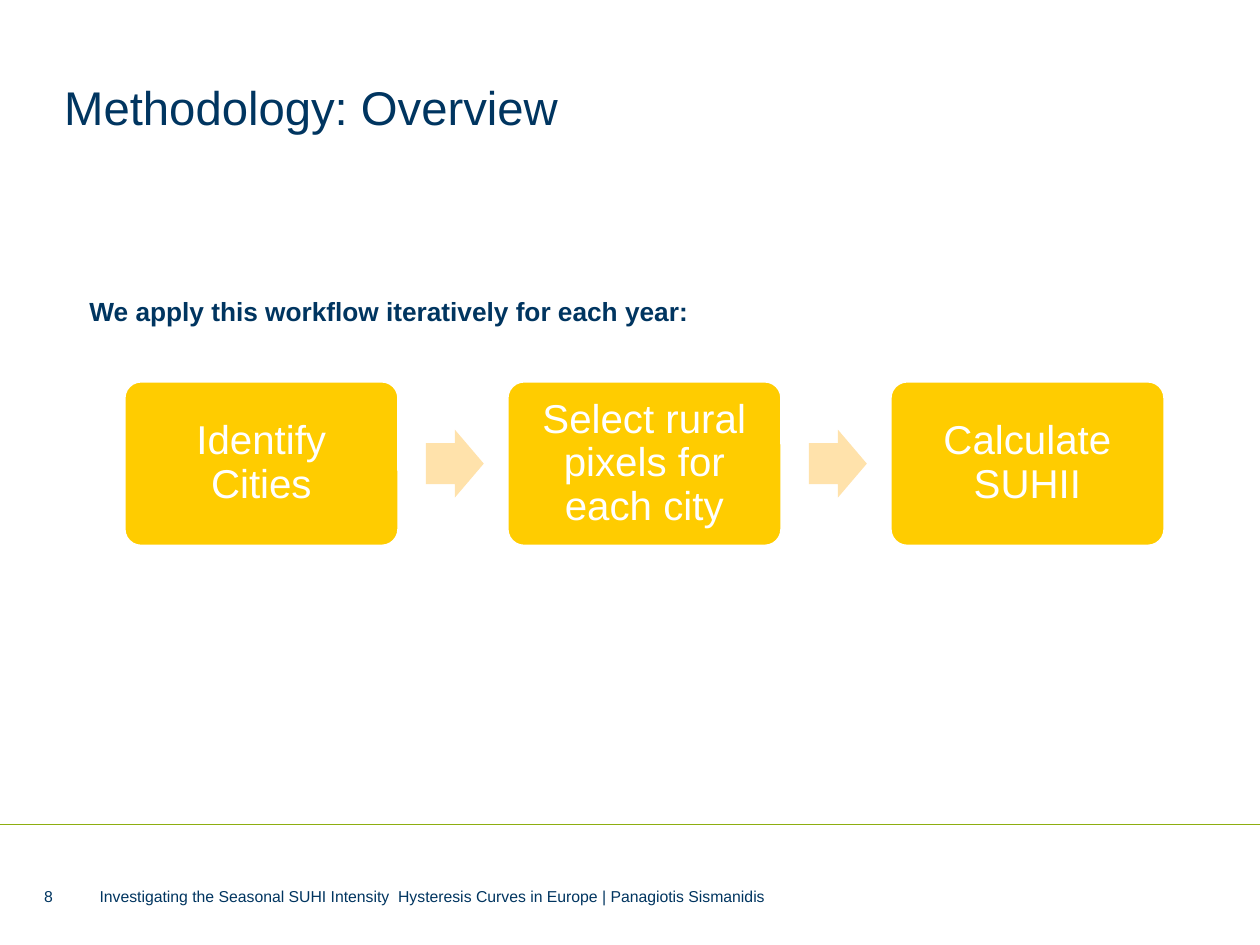
import pptx
import pptx.util
import pptx.dml.color
import pptx.enum.shapes
import pptx.enum.text
import lxml.etree

Inches, Pt = pptx.util.Inches, pptx.util.Pt
SHAPE = pptx.enum.shapes.MSO_SHAPE
ANCHOR = pptx.enum.text.MSO_ANCHOR
NAVY, YELLOW, CREAM, GREEN, WHITE = "003560", "FFCC00", "FFE2AB", "8DAE10", "FFFFFF"


def paint(target, color):
    """Give a fill, or the fill of a line, one solid colour."""
    target.solid()
    target.fore_color.rgb = pptx.dml.color.RGBColor.from_string(color)


def write(box, text, size, color, inset=0, anchor=ANCHOR.TOP, bold=False):
    """Put one run of text into a box and return its paragraph."""
    frame = box.text_frame
    frame.word_wrap = True
    frame.vertical_anchor = anchor
    frame.margin_left = frame.margin_right = Inches(inset)
    frame.margin_top = frame.margin_bottom = Inches(inset)
    para = frame.paragraphs[0]
    span = para.add_run()
    span.text = text
    span.font.name = "Arial"
    span.font.size = Pt(size)
    span.font.bold = bold
    paint(span.font.fill, color)
    return para


deck = pptx.Presentation()
deck.slide_width, deck.slide_height = Inches(10), Inches(7.5)
page = deck.slides.add_slide(deck.slide_layouts[6])
shapes = page.shapes

# Footer rule
rule = shapes.add_connector(pptx.enum.shapes.MSO_CONNECTOR.STRAIGHT,
                            0, Inches(6.54), deck.slide_width, Inches(6.54))
rule.line.width = Pt(0.5)
paint(rule.line.fill, GREEN)
properties = rule._element.spPr
lxml.etree.SubElement(properties, pptx.oxml.ns.qn("a:effectLst"))

# Title
title = shapes.add_textbox(Inches(0.51), Inches(0.58), Inches(8.27), Inches(0.68))
write(title, "Methodology: Overview", 27, NAVY)
title.text_frame.margin_top = Inches(0.04)

# Workflow: equal columns of steps, with an arrow in each gap
steps = ["Identify Cities", "Select rural pixels for each city", "Calculate SUHII"]
left, pitch, middle = 0.99, 3.04, 3.68
step_width, step_height = 2.17, 1.3
arrow_offset, arrow_width, arrow_height = 2.39, 0.46, 0.54

for column, label in enumerate(steps):
    x = left + column * pitch
    step = shapes.add_shape(SHAPE.ROUNDED_RECTANGLE,
                            Inches(x), Inches(middle - step_height / 2),
                            Inches(step_width), Inches(step_height))
    step.adjustments[0] = 0.1
    step.shadow.inherit = False
    paint(step.fill, YELLOW)
    paint(step.line.fill, WHITE)
    step.line.width = Pt(1)
    para = write(step, label, 23, WHITE, inset=0.1, anchor=ANCHOR.MIDDLE)
    para.alignment = pptx.enum.text.PP_ALIGN.CENTER
    para.line_spacing = 0.9

    if column < len(steps) - 1:
        arrow = shapes.add_shape(SHAPE.RIGHT_ARROW,
                                 Inches(x + arrow_offset), Inches(middle - arrow_height / 2),
                                 Inches(arrow_width), Inches(arrow_height))
        arrow.adjustments[0], arrow.adjustments[1] = 0.6, 0.5
        arrow.shadow.inherit = False
        paint(arrow.fill, CREAM)
        arrow.line.fill.background()

# Footer text and page number
footer = "Investigating the Seasonal SUHI Intensity  Hysteresis Curves in Europe | Panagiotis Sismanidis"
for x, width, text in [(0.79, 6.89, footer), (0.35, 0.28, "8")]:
    box = shapes.add_textbox(Inches(x), Inches(7.03), Inches(width), Inches(0.16))
    write(box, text, 9, NAVY, anchor=ANCHOR.MIDDLE)

# Lead sentence
lead = shapes.add_textbox(Inches(0.71), Inches(2.34), Inches(9.29), Inches(2.68))
para = write(lead, "We apply this workflow iteratively for each year:", 15, NAVY, bold=True)
para.line_spacing = Pt(18)
para.space_after = Pt(12)

deck.save("out.pptx")
